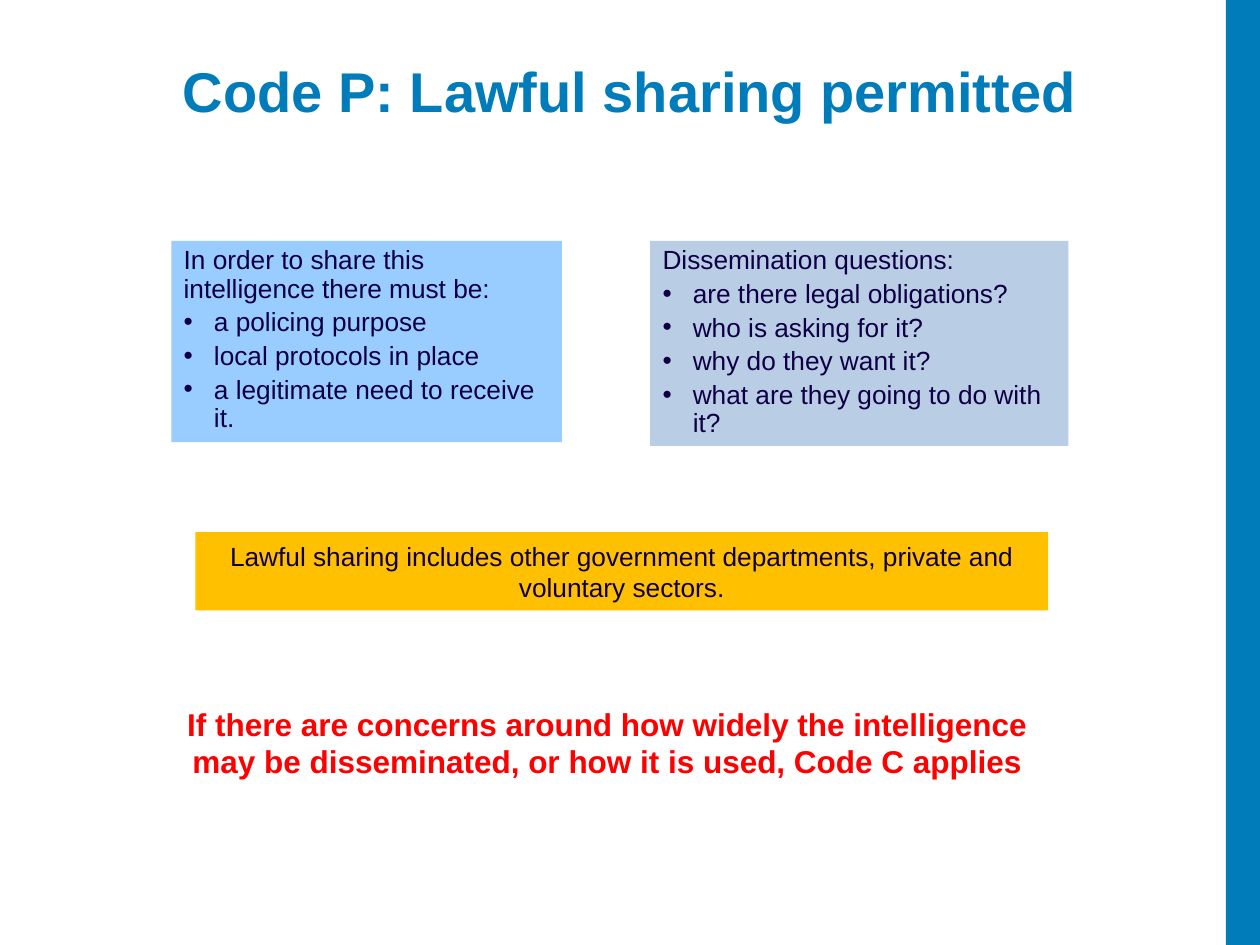
from dataclasses import dataclass

import pptx
import pptx.dml.color
import pptx.enum.shapes
import pptx.enum.text
import pptx.util
from lxml import etree
from pptx.oxml.ns import qn

ALIGN = pptx.enum.text.PP_ALIGN
ANCHOR = pptx.enum.text.MSO_ANCHOR
WIDTH, HEIGHT = 10, 7.5  # slide size in inches


@dataclass(frozen=True)
class Theme:
    font: str = "Arial"
    brand: str = "007CBA"
    ink: str = "0F0046"
    alert: str = "FF0000"
    sky: str = "99CCFF"
    steel: str = "B9CDE5"
    amber: str = "FFC000"
    title: int = 32
    callout: int = 18
    body: int = 15
    hanging: float = 0.24


@dataclass(frozen=True)
class Block:
    """A text block; left, top, width and height are shares of the slide."""
    left: float
    top: float
    width: float
    height: float
    lines: tuple[str, ...] = ()
    fill: str | None = None
    size: int = 15
    color: str = "000000"
    bold: bool = False
    align: ALIGN = ALIGN.CENTER
    anchor: ANCHOR = ANCHOR.TOP
    spacing: float = 1.0
    bulleted: bool = False  # every line after the first is a bullet


T = Theme()


def rgb(code: str) -> pptx.dml.color.RGBColor:
    return pptx.dml.color.RGBColor.from_string(code)


def add_bullet(p) -> None:
    ppr = p._p.get_or_add_pPr()
    indent = pptx.util.Inches(T.hanging)
    ppr.set("marL", str(indent))
    ppr.set("indent", str(-indent))
    etree.SubElement(ppr, qn("a:buFont")).set("typeface", T.font)
    etree.SubElement(ppr, qn("a:buChar")).set("char", "•")


def draw_block(s, block: Block) -> None:
    box = [pptx.util.Inches(v) for v in (block.left * WIDTH, block.top * HEIGHT,
                                         block.width * WIDTH, block.height * HEIGHT)]
    if block.fill:
        sp = s.shapes.add_shape(pptx.enum.shapes.MSO_SHAPE.RECTANGLE, *box)
        sp.shadow.inherit = False
        sp.fill.solid()
        sp.fill.fore_color.rgb = rgb(block.fill)
        sp.line.fill.background()
    else:
        sp = s.shapes.add_textbox(*box)
    tf = sp.text_frame
    tf.word_wrap = True
    tf.vertical_anchor = block.anchor
    for i, line in enumerate(block.lines):
        p = tf.add_paragraph() if i else tf.paragraphs[0]
        p.alignment = block.align
        p.line_spacing = block.spacing
        p.space_before = pptx.util.Pt(0.2 * block.size if i else 0)
        if block.bulleted and i:
            add_bullet(p)
        r = p.add_run()
        r.text = line
        r.font.name = T.font
        r.font.size = pptx.util.Pt(block.size)
        r.font.bold = block.bold
        r.font.color.rgb = rgb(block.color)


def panel(left: float, width: float, height: float, fill: str, *lines: str) -> Block:
    return Block(left, 0.255, width, height, lines, fill, T.body, T.ink,
                 align=ALIGN.LEFT, spacing=0.9, bulleted=True)


BLOCKS = (
    # Side band and title
    Block(0.973, 0, 0.027, 1, fill=T.brand),
    Block(0.069, 0.053, 0.862, 0.193, ("Code P: Lawful sharing permitted",),
          size=T.title, color=T.brand, bold=True),
    # Conditions and questions
    panel(0.136, 0.31, 0.213, T.sky,
          "In order to share this intelligence there must be:",
          "a policing purpose",
          "local protocols in place",
          "a legitimate need to receive it."),
    panel(0.516, 0.332, 0.217, T.steel,
          "Dissemination questions:",
          "are there legal obligations?",
          "who is asking for it?",
          "why do they want it?",
          "what are they going to do with it?"),
    # Scope and warning
    Block(0.155, 0.563, 0.677, 0.083,
          ("Lawful sharing includes other government departments, "
           "private and voluntary sectors.",),
          T.amber, T.body, T.ink, anchor=ANCHOR.MIDDLE),
    Block(0.134, 0.739, 0.696, 0.093,
          ("If there are concerns around how widely the intelligence may be "
           "disseminated, or how it is used, Code C applies",),
          size=T.callout, color=T.alert, bold=True),
)


def main() -> None:
    prs = pptx.Presentation()
    prs.slide_width = pptx.util.Inches(WIDTH)
    prs.slide_height = pptx.util.Inches(HEIGHT)
    s = prs.slides.add_slide(prs.slide_layouts[6])
    for block in BLOCKS:
        draw_block(s, block)
    prs.save("out.pptx")


if __name__ == "__main__":
    main()
